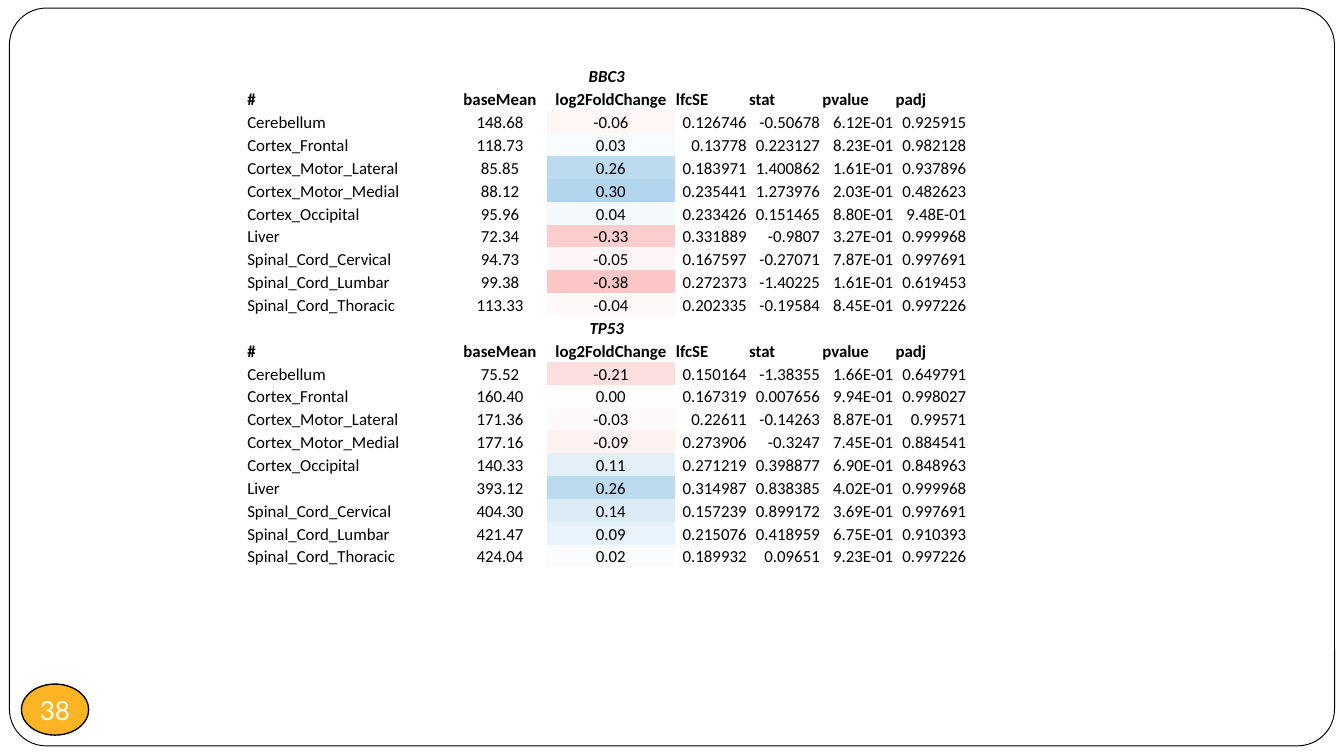
from dataclasses import dataclass
from typing import NamedTuple

from pptx import Presentation
from pptx.dml.color import RGBColor as RGB
from pptx.enum.shapes import MSO_SHAPE as Shape
from pptx.enum.text import MSO_ANCHOR as Anchor, PP_ALIGN as Align
from pptx.oxml.ns import qn
from pptx.util import Inches, Pt


@dataclass(frozen=True)
class Theme:
    ink: RGB = RGB(0, 0, 0)
    paper: RGB = RGB(255, 255, 255)
    badge: RGB = RGB(0xFC, 0xB4, 0x24)
    rise: RGB = RGB(3, 116, 195)    # shade of a fold change of +1
    fall: RGB = RGB(247, 104, 104)  # shade of a fold change of -1
    table_font: str = "Calibri"
    badge_font: str = "Lato"
    table_size: Pt = Pt(9)
    badge_size: Pt = Pt(14)


class Box(NamedTuple):
    left: float
    top: float
    width: float
    height: float

    def emu(self) -> list[int]:
        return [Inches(v) for v in self]


class Result(NamedTuple):
    base_mean: str
    fold_change: str
    lfc_se: str
    stat: str
    pvalue: str
    padj: str


class Gene(NamedTuple):
    name: str
    results: list[Result]


THEME = Theme()
TABLE = Box(1.83, 0.48, 5.37, 3.75)
WIDE_COLS = [1.54, 0.7, 0.95]
NO_STYLE_NO_GRID = "{2D5ABB26-0587-4C30-8999-92F81FD0307C}"
FOLD_COL = 2

HEADERS = ["#", "baseMean", "log2FoldChange", "lfcSE", "stat", "pvalue", "padj"]
HEADER_ALIGN = [Align.LEFT] + [Align.CENTER] * 2 + [Align.LEFT] * 4
VALUE_ALIGN = [Align.LEFT] + [Align.CENTER] * 2 + [Align.RIGHT] * 4

REGIONS = [
    "Cerebellum", "Cortex_Frontal", "Cortex_Motor_Lateral",
    "Cortex_Motor_Medial", "Cortex_Occipital", "Liver",
    "Spinal_Cord_Cervical", "Spinal_Cord_Lumbar", "Spinal_Cord_Thoracic",
]

# One result per region, in the order of REGIONS
GENES = [
    Gene("BBC3", [
        Result("148.68", "-0.06", "0.126746", "-0.50678", "6.12E-01", "0.925915"),
        Result("118.73", "0.03", "0.13778", "0.223127", "8.23E-01", "0.982128"),
        Result("85.85", "0.26", "0.183971", "1.400862", "1.61E-01", "0.937896"),
        Result("88.12", "0.30", "0.235441", "1.273976", "2.03E-01", "0.482623"),
        Result("95.96", "0.04", "0.233426", "0.151465", "8.80E-01", "9.48E-01"),
        Result("72.34", "-0.33", "0.331889", "-0.9807", "3.27E-01", "0.999968"),
        Result("94.73", "-0.05", "0.167597", "-0.27071", "7.87E-01", "0.997691"),
        Result("99.38", "-0.38", "0.272373", "-1.40225", "1.61E-01", "0.619453"),
        Result("113.33", "-0.04", "0.202335", "-0.19584", "8.45E-01", "0.997226"),
    ]),
    Gene("TP53", [
        Result("75.52", "-0.21", "0.150164", "-1.38355", "1.66E-01", "0.649791"),
        Result("160.40", "0.00", "0.167319", "0.007656", "9.94E-01", "0.998027"),
        Result("171.36", "-0.03", "0.22611", "-0.14263", "8.87E-01", "0.99571"),
        Result("177.16", "-0.09", "0.273906", "-0.3247", "7.45E-01", "0.884541"),
        Result("140.33", "0.11", "0.271219", "0.398877", "6.90E-01", "0.848963"),
        Result("393.12", "0.26", "0.314987", "0.838385", "4.02E-01", "0.999968"),
        Result("404.30", "0.14", "0.157239", "0.899172", "3.69E-01", "0.997691"),
        Result("421.47", "0.09", "0.215076", "0.418959", "6.75E-01", "0.910393"),
        Result("424.04", "0.02", "0.189932", "0.09651", "9.23E-01", "0.997226"),
    ]),
]


def fold_shade(change: float) -> RGB:
    """Blend from white towards the rise or fall colour."""
    target = THEME.rise if change > 0 else THEME.fall
    return RGB(*(round(w + (c - w) * abs(change)) for w, c in zip(THEME.paper, target)))


def add_outlined(s, kind: Shape, box: Box, fill: RGB, line_width: float):
    sp = s.shapes.add_shape(kind, *box.emu())
    sp.shadow.inherit = False
    sp.fill.solid()
    sp.fill.fore_color.rgb = fill
    sp.line.color.rgb = THEME.ink
    sp.line.width = Pt(line_width)
    return sp


def style_font(font, name: str, size: Pt, color: RGB) -> None:
    font.name, font.size = name, size
    font.color.rgb = color


def write_cell(cell, text: str, align: Align, bold: bool = False, italic: bool = False) -> None:
    cell.margin_left = cell.margin_right = cell.margin_top = Inches(0.01)
    cell.margin_bottom = 0
    cell.vertical_anchor = Anchor.BOTTOM
    cell.fill.background()
    p = cell.text_frame.paragraphs[0]
    p.text, p.alignment = text, align
    style_font(p.font, THEME.table_font, THEME.table_size, THEME.ink)
    p.font.bold, p.font.italic = bold, italic


def write_gene(table, top: int, gene: Gene) -> None:
    # Gene name across the full width
    table.cell(top, 0).merge(table.cell(top, len(HEADERS) - 1))
    write_cell(table.cell(top, 0), gene.name, Align.CENTER, bold=True, italic=True)

    # Column headings
    for col, (text, align) in enumerate(zip(HEADERS, HEADER_ALIGN)):
        write_cell(table.cell(top + 1, col), text, align, bold=True)

    # Results by region
    for row, (region, result) in enumerate(zip(REGIONS, gene.results), top + 2):
        for col, (text, align) in enumerate(zip((region, *result), VALUE_ALIGN)):
            write_cell(table.cell(row, col), text, align)
        fill = table.cell(row, FOLD_COL).fill
        fill.solid()
        fill.fore_color.rgb = fold_shade(float(result.fold_change))


def add_gene_table(s) -> None:
    block = len(REGIONS) + 2
    n_rows = block * len(GENES)
    frame = s.shapes.add_table(n_rows, len(HEADERS), *TABLE.emu())
    for style in frame.element.iter(qn("a:tableStyleId")):
        style.text = NO_STYLE_NO_GRID
    table = frame.table
    table.first_row = table.horz_banding = False

    # The narrow columns share the remaining width
    n_narrow = len(HEADERS) - len(WIDE_COLS)
    narrow = (TABLE.width - sum(WIDE_COLS)) / n_narrow
    for column, width in zip(table.columns, WIDE_COLS + [narrow] * n_narrow):
        column.width = Inches(width)
    for row in table.rows:
        row.height = Inches(TABLE.height / n_rows)

    for i, gene in enumerate(GENES):
        write_gene(table, i * block, gene)


def add_page_badge(s, number: str) -> None:
    sp = add_outlined(s, Shape.OVAL, Box(0.16, 5.09, 0.5, 0.38), THEME.badge, 0.75)
    tf = sp.text_frame
    tf.margin_left = tf.margin_right = tf.margin_top = tf.margin_bottom = 0
    tf.word_wrap = False
    tf.vertical_anchor = Anchor.MIDDLE
    p = tf.paragraphs[0]
    p.text, p.alignment = number, Align.CENTER
    style_font(p.font, THEME.badge_font, THEME.badge_size, THEME.paper)


def main() -> None:
    # Widescreen page, 16:9
    prs = Presentation()
    prs.slide_width, prs.slide_height = Inches(10), Inches(10 * 9 / 16)
    s = prs.slides.add_slide(prs.slide_layouts[6])

    # Rounded page frame
    border = add_outlined(s, Shape.ROUNDED_RECTANGLE, Box(0.07, 0.06, 9.86, 5.49), THEME.paper, 0.5)
    border.adjustments[0] = 0.05

    add_page_badge(s, "38")
    add_gene_table(s)
    prs.save("out.pptx")


if __name__ == "__main__":
    main()
